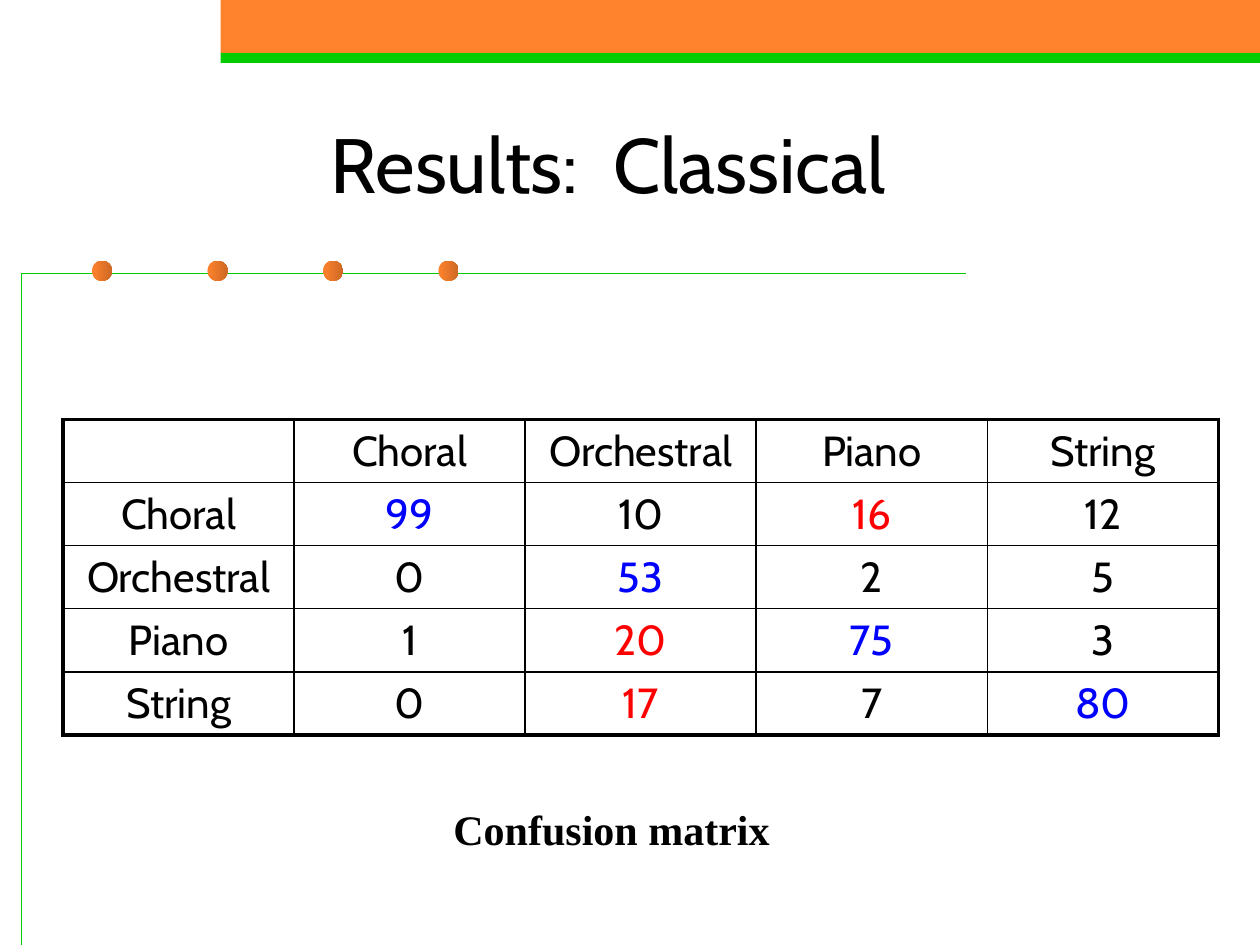
"""Build the slide of classical music results with its confusion matrix."""
import pptx
import pptx.dml.color
import pptx.enum.shapes
import pptx.enum.text
import pptx.oxml
import pptx.oxml.ns
import pptx.util

Inches = pptx.util.Inches
Pt = pptx.util.Pt
Shape = pptx.enum.shapes.MSO_SHAPE
Align = pptx.enum.text.PP_ALIGN
Anchor = pptx.enum.text.MSO_ANCHOR

COLORS = {
    "black": "000000",
    "blue": "0000FF",
    "red": "FF0000",
    "green": "00CC00",
    "orange": "FF822D",
    "brown": "CD6924",
}
LABELS = ["Choral", "Orchestral", "Piano", "String"]
COUNTS = [[99, 10, 16, 12], [0, 53, 2, 5], [1, 20, 75, 3], [0, 17, 7, 80]]
HIGH = 15


def color(name):
    return pptx.dml.color.RGBColor.from_string(COLORS[name])


class Deck:
    """Hold the style and the current slide."""

    def __init__(self):
        self.show = pptx.Presentation()
        self.show.slide_width, self.show.slide_height = Inches(10), Inches(7.5)
        self.slide = self.show.slides.add_slide(self.show.slide_layouts[5])
        self.shapes = self.slide.shapes
        self.body = {"name": "Cabin", "size": Pt(24), "bold": False}
        self.head = {**self.body, "size": Pt(44)}
        self.note = {"name": "Times New Roman", "size": Pt(24), "bold": True}

    def label(self, frame, text, style, tint="black", align=Align.CENTER):
        line = frame.paragraphs[0]
        line.text = text
        line.alignment = align
        for key, value in style.items():
            setattr(line.font, key, value)
        line.font.color.rgb = color(tint)

    def title(self, text, left, top, width, height):
        box = self.shapes.title
        place = {"left": left, "top": top, "width": width, "height": height}
        for key, value in place.items():
            setattr(box, key, Inches(value))
        box.text_frame.vertical_anchor = Anchor.MIDDLE
        self.label(box.text_frame, text, self.head)

    def text(self, text, *place):
        frame = self.shapes.add_textbox(*map(Inches, place)).text_frame
        frame.word_wrap = True
        self.label(frame, text, self.note, align=Align.LEFT)

    def shape(self, kind, *place):
        item = self.shapes.add_shape(kind, *map(Inches, place))
        item.shadow.inherit = False
        item.line.fill.background()
        return item

    def bar(self, tint, *place):
        item = self.shape(Shape.RECTANGLE, *place)
        item.fill.solid()
        item.fill.fore_color.rgb = color(tint)

    def dot(self, left, top, size):
        fill = self.shape(Shape.OVAL, left, top, size, size).fill
        fill.gradient()
        fill.gradient_angle = 0
        for stop, tint in zip(fill.gradient_stops, ("orange", "brown")):
            stop.color.rgb = color(tint)

    def rule(self, *points):
        spots = [(Inches(x), Inches(y)) for x, y in points]
        form = self.shapes.build_freeform(*spots[0])
        form.add_line_segments(spots[1:], close=False)
        item = form.convert_to_shape()
        item.shadow.inherit = False
        item.fill.background()
        item.line.color.rgb = color("green")
        item.line.width = Pt(0.75)

    def edge(self, cell, widths):
        props = cell._tc.get_or_add_tcPr()
        for spot, (side, width) in enumerate(widths.items()):
            line = pptx.oxml.parse_xml(
                f'<a:ln{side} {pptx.oxml.ns.nsdecls("a")} w="{Pt(width)}">'
                f'<a:solidFill><a:srgbClr val="{COLORS["black"]}"/></a:solidFill>'
                f'</a:ln{side}>'
            )
            props.insert(spot, line)

    def table(self, rows, tints, left, top, width, height):
        count, span = len(rows), len(rows[0])
        grid = self.shapes.add_table(
            count, span, *map(Inches, (left, top, width, height))
        ).table
        grid.first_row = grid.horz_banding = False
        for r, row in enumerate(rows):
            for c, text in enumerate(row):
                cell = grid.cell(r, c)
                cell.fill.background()
                cell.vertical_anchor = Anchor.MIDDLE
                self.label(cell.text_frame, text, self.body, tints[r][c])
                ends = {"L": c == 0, "R": c == span - 1,
                        "T": r == 0, "B": r == count - 1}
                self.edge(cell, {side: 2.25 if end else 1
                                 for side, end in ends.items()})


def tint(row, col):
    if row == col:
        return "blue"
    return "red" if COUNTS[row][col] > HIGH else "black"


def main():
    deck = Deck()
    deck.bar("orange", 1.75, 0, 8.25, 0.42)
    deck.bar("green", 1.75, 0.42, 8.25, 0.08)
    deck.rule((0.17, 7.5), (0.17, 2.17), (7.67, 2.17))
    for step in range(4):
        deck.dot(0.73 + 2.75 / 3 * step, 2.07, 0.16)
    deck.title("Results:  Classical", 0.58, 0.67, 8.5, 1.25)
    deck.text("Confusion matrix", 3.5, 6.33, 2.75, 0.5)
    rows = [[""] + LABELS]
    tints = [["black"] * len(rows[0])]
    for r, (name, counts) in enumerate(zip(LABELS, COUNTS)):
        rows.append([name] + [str(count) for count in counts])
        tints.append(["black"] + [tint(r, c) for c in range(len(counts))])
    deck.table(rows, tints, 0.5, 3.33, 9.17, 2.5)
    deck.show.save("out.pptx")


if __name__ == "__main__":
    main()
